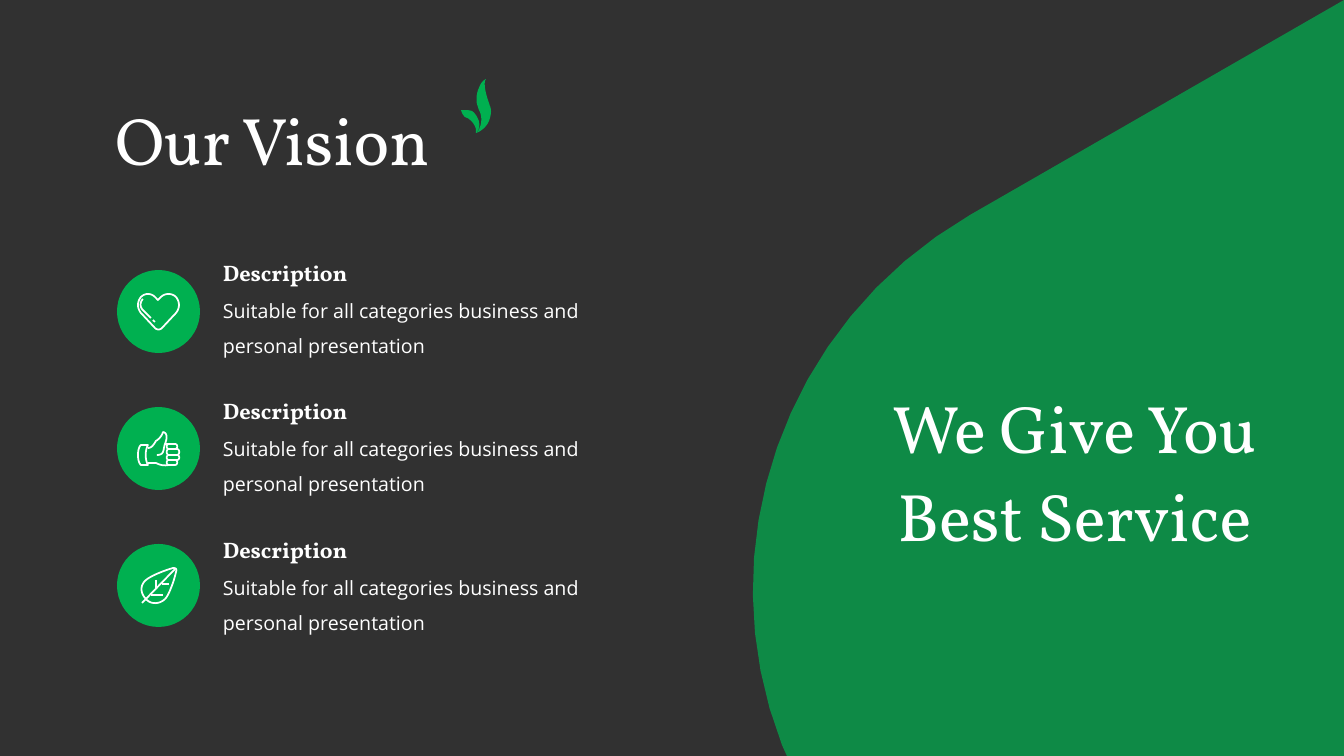
from lxml import etree
from pptx import Presentation
from pptx.dml.color import RGBColor
from pptx.enum.shapes import MSO_SHAPE
from pptx.enum.text import MSO_ANCHOR, MSO_AUTO_SIZE, PP_ALIGN
from pptx.oxml.ns import qn
from pptx.util import Pt

PX = 12192000 / 1344
OVAL = MSO_SHAPE.OVAL
MIDDLE = MSO_ANCHOR.MIDDLE
FIXED = MSO_AUTO_SIZE.NONE
LEFT, CENTER = PP_ALIGN.LEFT, PP_ALIGN.CENTER
CHARCOAL = RGBColor(0x31, 0x31, 0x31)
GREEN = RGBColor(0x00, 0xB0, 0x50)
WHITE = RGBColor(0xFF, 0xFF, 0xFF)
SERIF, SANS = "Vollkorn", "Open Sans"
CURVE_STEPS = 16

deck = Presentation()
deck.slide_width = round(1344 * PX)
deck.slide_height = round(756 * PX)
page = deck.slides.add_slide(deck.slide_layouts[5])
page.background.fill.solid()
page.background.fill.fore_color.rgb = CHARCOAL


def write(text, left, top, width, height, size, font=SERIF, bold=False,
          align=LEFT, spacing=1.0, box=None):
    place = [round(length * PX) for length in (left, top, width, height)]
    box = box or page.shapes.add_textbox(*place)
    box.left, box.top, box.width, box.height = place
    frame = box.text_frame
    frame.word_wrap = True
    frame.auto_size = FIXED
    frame.vertical_anchor = MIDDLE
    para = frame.paragraphs[0]
    para.text = text
    para.alignment = align
    para.line_spacing = spacing
    for span in para.runs:
        span.font.size = Pt(size)
        span.font.name = font
        span.font.bold = bold
        span.font.color.rgb = WHITE


def draw(contours, fill=None, stroke=None):
    builder = None
    for start, *segments in contours:
        points = [start]
        for segment in segments:
            if len(segment) == 2:
                points.append(segment)
                continue
            (x0, y0), (x1, y1, x2, y2, x3, y3) = points[-1], segment
            for step in range(1, CURVE_STEPS + 1):
                t = step / CURVE_STEPS
                u = 1 - t
                a, b, c, d = u**3, 3 * u * u * t, 3 * u * t * t, t**3
                points.append((a * x0 + b * x1 + c * x2 + d * x3,
                               a * y0 + b * y1 + c * y2 + d * y3))
        scaled = [(x * PX, y * PX) for x, y in points]
        if builder is None:
            builder = page.shapes.build_freeform(*scaled[0])
        else:
            builder.move_to(*scaled[0])
        builder.add_line_segments(scaled[1:], close=False)
    shape = builder.convert_to_shape()
    shape.shadow.inherit = False
    if fill is None:
        shape.fill.background()
    else:
        shape.fill.solid()
        shape.fill.fore_color.rgb = fill
    if stroke is None:
        shape.line.fill.background()
    else:
        shape.line.color.rgb = stroke
        shape.line.width = Pt(1.25)
    return shape


drop = draw([[(1344, 0), (1344, 756), (787, 756), (782, 745),
              (706, 550, 782, 324, 970, 215), (1344, 0)]], fill=GREEN)
drop_color = drop.fill._xPr.find(qn("a:solidFill"))[0]
etree.SubElement(drop_color, qn("a:alpha"), val="70000")

write("Our Vision", 105, 93, 1008, 101, 48, spacing=0.9, box=page.shapes.title)

sprout = [
    [(464, 110), (461, 110), (462, 113, 463, 115, 465, 117),
     (467, 118, 468, 118, 469, 119), (472, 121, 475, 125, 476, 129),
     (476, 133), (479, 130, 480, 126, 479, 121),
     (477, 116, 475, 113, 472, 111), (469, 110, 466, 110, 464, 110)],
    [(486, 79), (482, 81, 480, 85, 479, 88), (477, 92, 476, 98, 477, 104),
     (479, 110), (482, 115, 482, 122, 480, 127),
     (479, 130, 478, 132, 476, 133), (482, 131, 487, 126, 489, 121),
     (491, 116, 492, 110, 490, 106), (487, 97, 484, 88, 485, 81), (486, 79)],
]
draw(sprout, fill=GREEN)

heart = [
    [(158, 300), (155, 297), (151, 293, 145, 293, 141, 297),
     (137, 302, 137, 308, 141, 313), (155, 328),
     (157, 330, 160, 330, 162, 328), (176, 313),
     (180, 308, 180, 302, 176, 297), (172, 293, 165, 293, 161, 297),
     (158, 300)],
    [(151, 318), (142, 309), (140, 306, 140, 302, 143, 299)],
    [(153, 320), (155, 322)],
]
fingers = [
    [(169, top), (right - 3, top), (right, top, right, bottom, right - 3, bottom),
     (169, bottom), (166, bottom, 166, top, 169, top)]
    for top, bottom, right in
    [(444, 449, 178), (449, 455, 180), (455, 460, 180), (460, 465, 178)]
]
thumb = [
    [(148, 445), (141, 445), (137, 448, 137, 462, 141, 465), (148, 465),
     (145, 460, 145, 450, 148, 445)],
    [(148, 448), (152, 448, 154, 444, 156, 441),
     (159, 439, 162, 436, 163, 432), (168, 433, 167, 439, 165, 444),
     (163, 449, 165, 455, 157, 455)],
    [(165, 444), (169, 444)],
    [(148, 463), (156, 463), (160, 465, 164, 466, 169, 465)],
] + fingers
leaf = [
    [(146, 599), (140, 593, 140, 585, 146, 580),
     (152, 575, 166, 570, 173, 568), (176, 568, 177, 569, 176, 572),
     (174, 581, 169, 595, 165, 599), (160, 604, 151, 605, 146, 599)],
    [(142, 603), (175, 569)],
    [(156, 580), (156, 589)],
    [(151, 595), (163, 595)],
    [(162, 584), (169, 584)],
]

for row, (icon, heading_top) in enumerate([(heart, 254), (thumb, 392), (leaf, 531)]):
    disc = page.shapes.add_shape(OVAL, round(117 * PX), round((270 + 137 * row) * PX),
                                 round(83 * PX), round(83 * PX))
    disc.shadow.inherit = False
    disc.fill.solid()
    disc.fill.fore_color.rgb = GREEN
    disc.line.fill.background()
    draw(icon, stroke=WHITE)
    write("Description", 213, heading_top, 224, 37, 16, bold=True)
    write("Suitable for all categories business and personal presentation",
          213, heading_top + 29, 386, 78, 14, font=SANS, spacing=1.5)

write("We Give You\vBest Service", 814, 318, 521, 297, 48, align=CENTER, spacing=1.1)

deck.save("out.pptx")
